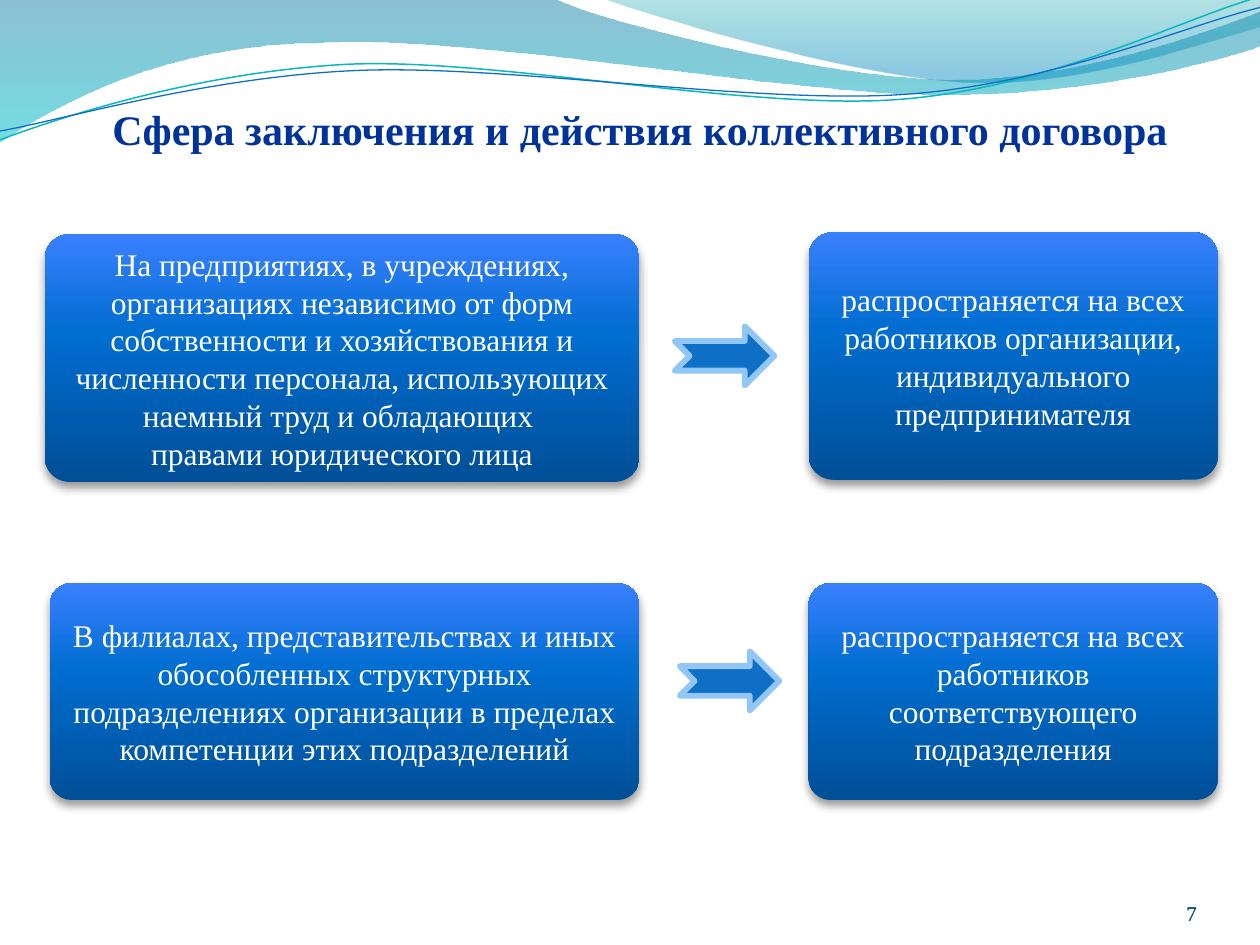
from lxml import etree
from pptx import Presentation
from pptx.dml.color import RGBColor
from pptx.enum.shapes import MSO_SHAPE
from pptx.enum.text import MSO_ANCHOR, PP_ALIGN
from pptx.oxml.ns import qn
from pptx.util import Inches, Pt

ROUND_RECT = MSO_SHAPE.ROUNDED_RECTANGLE
ARROW = MSO_SHAPE.NOTCHED_RIGHT_ARROW
MIDDLE, BOTTOM = MSO_ANCHOR.MIDDLE, MSO_ANCHOR.BOTTOM
CENTER, RIGHT = PP_ALIGN.CENTER, PP_ALIGN.RIGHT

WIDTH, HEIGHT = Inches(10), Inches(7.5)
FONT = "Times New Roman"
COLORS = {
    "title": "003399", "number": "045D75", "white": "FFFFFF", "shadow": "000000",
    "arrow": "0F6FC6", "arrow_edge": "91C6F7", "teal_line": "09B7BF",
    "box_dark": "004F97", "box_mid": "006DD0", "box_light": "3980FF",
    "wave_blue": "0074A0", "wave_cyan": "00C4CD",
    "crest_green": "00A0A8", "crest_blue": "008ABF",
}
# Gradient stops: position %, colour, opacity %
BOX_STOPS = [(0, "box_dark", 100), (60, "box_mid", 100), (100, "box_light", 100)]
WAVE_STOPS = [(0, "wave_blue", 45), (100, "wave_cyan", 55)]
CREST_STOPS = [(0, "crest_green", 30), (80, "crest_blue", 45)]

# Outlines in inches: a pair is a line end, six numbers are a Bézier segment
WAVE = [
    (0, 0), (4.4, -0.01), (4.76, 0.17, 6.63, 0.63, 7.58, 0.63),
    (8.53, 0.63, 9.58, 0.26, 10, 0.09), (10.01, 0.36),
    (9.83, 0.44, 8.7, 0.76, 7.46, 0.75), (6.22, 0.75, 3.82, 0.28, 2.57, 0.34),
    (1.29, 0.35, 0.46, 0.83, -0.01, 1.13),
]
CREST = [
    (4.79, -0.01), (5.09, 0.11, 6.82, 0.62, 7.69, 0.65),
    (8.55, 0.69, 9.61, 0.32, 10, 0.21), (10, 0),
]
TEAL_CURVE = [
    (0, 1.11), (0.48, 0.93, 1.58, 0.57, 2.77, 0.51),
    (3.95, 0.46, 5.93, 0.88, 7.13, 0.79), (8.33, 0.7, 9.38, 0.15, 9.98, -0.02),
]
BLUE_CURVE = [
    (0, 1.04), (0.47, 0.96, 1.64, 0.61, 2.83, 0.56),
    (4.03, 0.51, 5.97, 0.83, 7.17, 0.75), (8.36, 0.67, 9.41, 0.2, 10, 0.06),
]

# Rows and columns as percentages of the slide's size
TOP_ROW, BOTTOM_ROW = (24.8, 26.2), (61.73, 22.93)
RIGHT_COL = (64.17, 32.5)
BOXES = [
    (3.55, 47.2, *TOP_ROW, [
        "На предприятиях, в учреждениях, организациях независимо от форм "
        "собственности и хозяйствования и численности персонала, использующих "
        "наемный труд и обладающих ",
        "правами юридического лица"]),
    (3.95, 46.8, *BOTTOM_ROW, [
        "В филиалах, представительствах и иных обособленных структурных "
        "подразделениях организации в пределах компетенции этих подразделений"]),
    (*RIGHT_COL, 24.57, 26.2, [
        "распространяется на всех работников организации, индивидуального "
        "предпринимателя"]),
    (*RIGHT_COL, *BOTTOM_ROW, [
        "распространяется на всех работников соответствующего подразделения"]),
]
ARROWS = [(53.55, 34.53), (53.95, 68.93)]
ARROW_SIZE = (7.9, 6.27)
NUMBER_COLS = [(86.7, 8.3), (71.7, 23.3)]


def rgb(name):
    return RGBColor.from_string(COLORS[name])


def place(left, top, width, height):
    """Turn percentages of the slide into lengths."""
    return [round(share * side / 100) for share, side in
            zip((left, top, width, height), (WIDTH, HEIGHT) * 2)]


def add_color(parent, name, opacity):
    clr = etree.SubElement(parent, qn("a:srgbClr"), val=COLORS[name])
    if opacity < 100:
        etree.SubElement(clr, qn("a:alpha"), val=str(opacity * 1000))


def fill_gradient(s, stops, angle):
    """Fill with stops; the angle runs counter-clockwise."""
    s.fill.gradient()
    s.fill.gradient_angle = angle
    gs_list = s.element.spPr.find(qn("a:gradFill")).find(qn("a:gsLst"))
    for gs in list(gs_list):
        gs_list.remove(gs)
    for position, name, opacity in stops:
        gs = etree.SubElement(gs_list, qn("a:gs"), pos=str(position * 1000))
        add_color(gs, name, opacity)


def add_shadow(s):
    effects = s.element.spPr.find(qn("a:effectLst"))
    shadow = etree.SubElement(
        effects, qn("a:outerShdw"), blurRad=str(Pt(5.2)), dist=str(Pt(3)),
        dir="5400000", rotWithShape="0")
    add_color(shadow, "shadow", 40)


def bend(s, outline):
    """Join the three lines through each Bézier segment's points into one curve."""
    lines = iter(list(s.element.spPr.iter(qn("a:lnTo"))))
    for segment in outline[1:]:
        first = next(lines)
        if len(segment) == 6:
            curve = etree.Element(qn("a:cubicBezTo"))
            first.addprevious(curve)
            for line in (first, next(lines), next(lines)):
                curve.append(line[0])
                line.getparent().remove(line)


def add_outline(slide, outline, close):
    builder = slide.shapes.build_freeform(*map(Inches, outline[0]))
    points = [(Inches(x), Inches(y)) for segment in outline[1:]
              for x, y in zip(segment[::2], segment[1::2])]
    builder.add_line_segments(points, close=close)
    s = builder.convert_to_shape()
    bend(s, outline)
    s.shadow.inherit = False
    return s


def add_wave(slide, outline, stops):
    s = add_outline(slide, outline, True)
    fill_gradient(s, stops, 270)
    s.line.fill.background()


def add_curve(slide, outline, color, weight):
    s = add_outline(slide, outline, False)
    s.fill.background()
    s.line.color.rgb = rgb(color)
    s.line.width = Pt(weight)


def write(s, lines, color, size, align, anchor, insets, bold=False):
    tf = s.text_frame
    frame = dict(zip(("margin_left", "margin_top", "margin_right", "margin_bottom"),
                     map(Inches, insets)), word_wrap=True, vertical_anchor=anchor)
    for name, value in frame.items():
        setattr(tf, name, value)
    for i, line in enumerate(lines):
        p = tf.paragraphs[0] if i == 0 else tf.add_paragraph()
        p.alignment = align
        r = p.add_run()
        r.text = line
        for name, value in {"name": FONT, "size": Pt(size), "bold": bold}.items():
            setattr(r.font, name, value)
        r.font.color.rgb = rgb(color)


def add_box(slide, left, width, top, height, lines):
    s = slide.shapes.add_shape(ROUND_RECT, *place(left, top, width, height))
    s.adjustments[0] = 0.1
    s.shadow.inherit = False
    add_shadow(s)
    fill_gradient(s, BOX_STOPS, 90)
    s.line.fill.background()
    write(s, lines, "white", 18, CENTER, MIDDLE, (0.07, 0.04, 0.07, 0.04))


def add_arrow(slide, left, top):
    s = slide.shapes.add_shape(ARROW, *place(left, top, *ARROW_SIZE))
    s.shadow.inherit = False
    s.fill.solid()
    s.fill.fore_color.rgb = rgb("arrow")
    s.line.color.rgb = rgb("arrow_edge")
    s.line.width = Pt(3.35)


def main():
    prs = Presentation()
    prs.slide_width, prs.slide_height = WIDTH, HEIGHT
    slide = prs.slides.add_slide(prs.slide_layouts[6])
    add_wave(slide, WAVE, WAVE_STOPS)
    add_wave(slide, CREST, CREST_STOPS)
    add_curve(slide, TEAL_CURVE, "teal_line", 0.85)
    add_curve(slide, BLUE_CURVE, "arrow", 0.75)
    title = slide.shapes.add_textbox(*place(5.9, 6.93, 89.8, 9.33))
    write(title, ["Сфера заключения и действия коллективного договора"],
          "title", 24, CENTER, BOTTOM, (0, 0.05, 0, 0), bold=True)
    for left, width in NUMBER_COLS:
        number = slide.shapes.add_textbox(*place(left, 92.67, width, 5.33))
        write(number, ["7"], "number", 12, RIGHT, BOTTOM, (0, 0, 0, 0))
    for box in BOXES:
        add_box(slide, *box)
    for arrow in ARROWS:
        add_arrow(slide, *arrow)
    prs.save("out.pptx")


if __name__ == "__main__":
    main()
